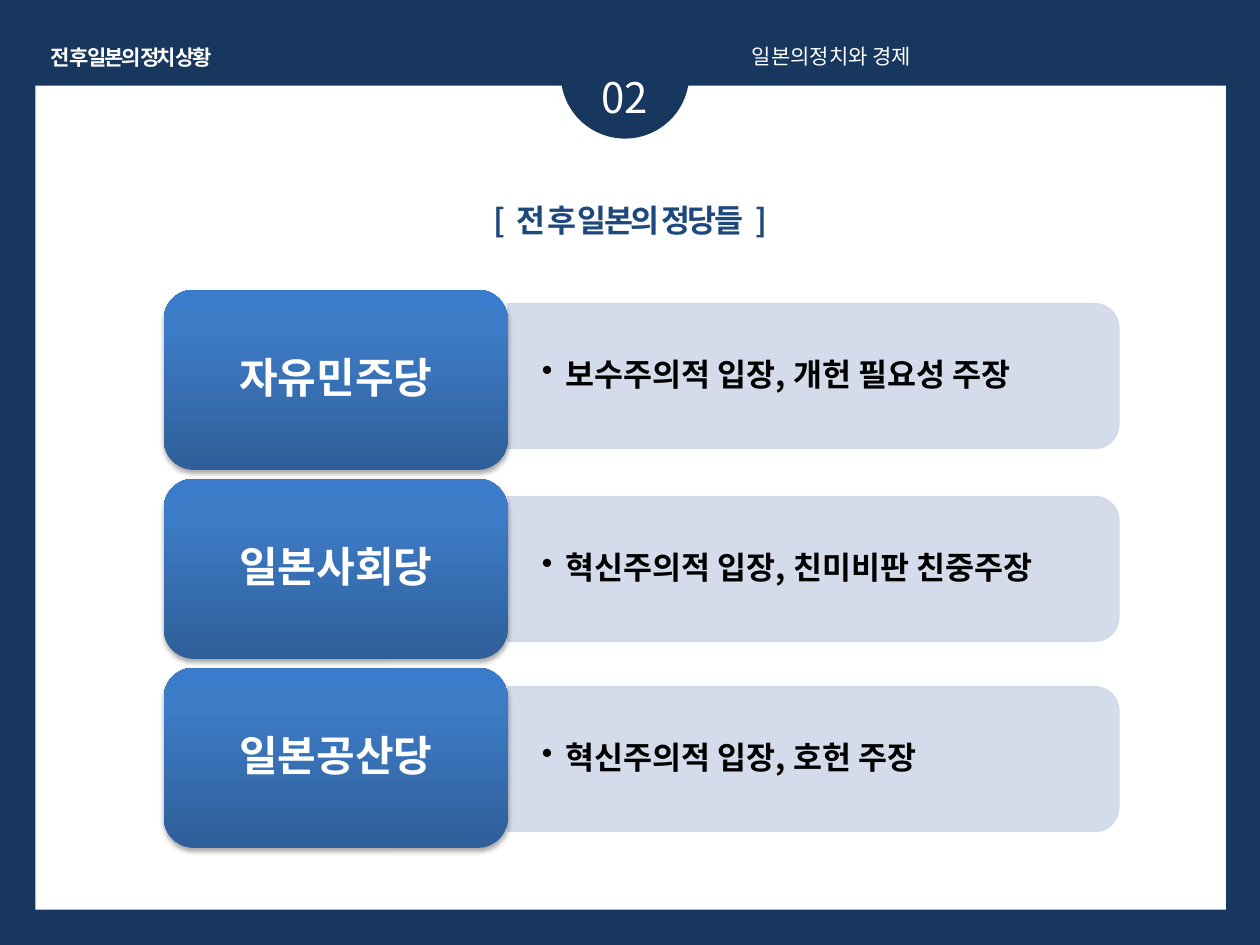
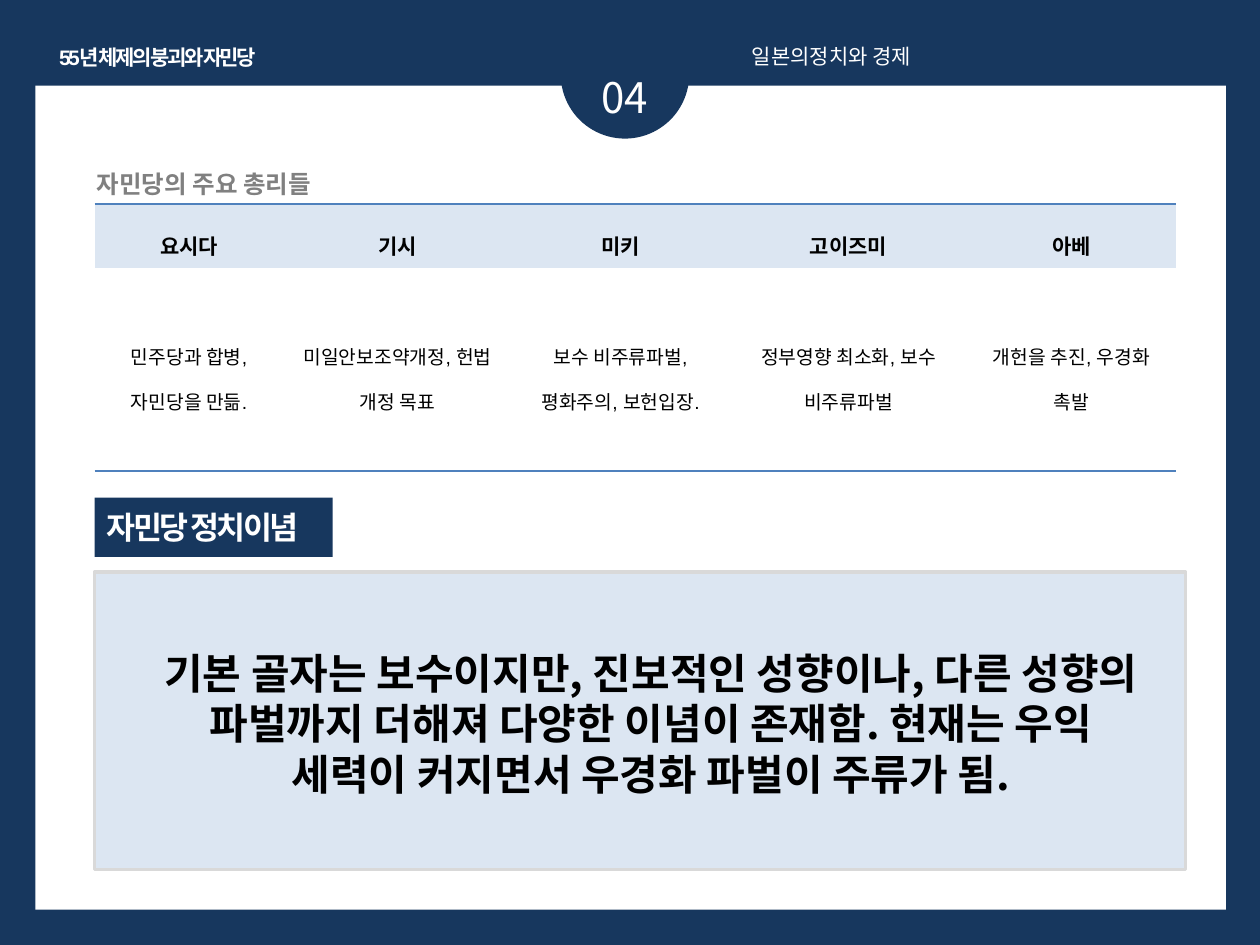
from lxml import etree
from pptx import Presentation
from pptx.dml.color import RGBColor
from pptx.enum import shapes, text
from pptx.oxml import parse_xml
from pptx.oxml.ns import nsdecls, qn
from pptx.util import Inches, Pt

NAVY, WHITE, BLACK = "17375E", "FFFFFF", "000000"
TITLE_BLUE, PALE_BLUE, BAR_BLUE = "1F497D", "DCE6F2", "D0D8E8"
RULE_BLUE, GREY, LIGHT_GREY = "4F81BD", "808080", "D9D9D9"
CARD_GRADIENT = ((0, "2F5F99"), (80, "3D7CC7"), (100, "3A7CCB"))
KOREAN, LATIN = "Noto Sans CJK KR", "Arial"
PLAIN_TABLE_STYLE = "{2D5ABB26-0587-4C30-8999-92F81FD0307C}"
LEFT, CENTER, JUSTIFY = (text.PP_ALIGN.LEFT, text.PP_ALIGN.CENTER,
                         text.PP_ALIGN.JUSTIFY)
MIDDLE = text.MSO_ANCHOR.MIDDLE
SHAPE = shapes.MSO_SHAPE

SECTION = "일본의정치와 경제"
PARTIES = [  # name, position, top of its bar
    ("자유민주당", "보수주의적 입장, 개헌 필요성 주장", 2.41),
    ("일본사회당", "혁신주의적 입장, 친미비판 친중주장", 3.94),
    ("일본공산당", "혁신주의적 입장, 호헌 주장", 5.45),
]
CARD_TOP, CARD_STEP = 2.3, 1.5
PREMIERS = [  # name, policy, column width
    ("요시다", "민주당과 합병,자민당을 만듦.", 1.5),
    ("기시", "미일안보조약개정, 헌법 개정 목표", 1.81),
    ("미키", "보수 비주류파벌, 평화주의, 보헌입장.", 1.73),
    ("고이즈미", "정부영향 최소화, 보수 비주류파벌", 1.89),
    ("아베", "개헌을 추진, 우경화 촉발", 1.65),
]
IDEOLOGY = ("기본 골자는 보수이지만, 진보적인 성향이나, 다른 성향의 파벌까지 "
            "더해져 다양한 이념이 존재함. 현재는 우익 세력이 커지면서 "
            "우경화 파벌이 주류가 됨.")


def color(value):
    return RGBColor.from_string(value)


def box(left, top, width, height):
    return [Inches(length) for length in (left, top, width, height)]


def write(frame, content, size, fill, bold=False, align=LEFT, font=KOREAN,
          spacing=0, line_spacing=None):
    """Fill a text frame; content is a string or (string, spacing) pieces."""
    pieces = [(content, spacing)] if isinstance(content, str) else content
    paragraph = frame.paragraphs[0]
    paragraph.alignment = align
    if line_spacing:
        paragraph.line_spacing = line_spacing
    for piece, piece_spacing in pieces:
        run = paragraph.add_run()
        run.text = piece
        run.font.size = Pt(size)
        run.font.bold = bold
        run.font.name = font
        run.font.color.rgb = color(fill)
        properties = run.font._element
        etree.SubElement(properties, qn("a:ea")).set("typeface", KOREAN)
        if piece_spacing:
            properties.set("spc", str(round(piece_spacing * 100)))
    return paragraph


def add_text(slide, place, content, size, fill, **style):
    text_box = slide.shapes.add_textbox(*box(*place))
    text_box.text_frame.word_wrap = True
    paragraph = write(text_box.text_frame, content, size, fill, **style)
    return text_box.text_frame, paragraph


def add_block(slide, kind, place, fill, line=None, line_width=0.75):
    block = slide.shapes.add_shape(kind, *box(*place))
    block.shadow.inherit = False
    block.fill.solid()
    block.fill.fore_color.rgb = color(fill)
    if line:
        block.line.color.rgb = color(line)
        block.line.width = Pt(line_width)
    else:
        block.line.fill.background()
    return block


def add_framed_slide(presentation, title, title_place, number):
    """Add a slide with the navy frame, header texts and number tab."""
    slide = presentation.slides.add_slide(presentation.slide_layouts[5])
    slide.background.fill.solid()
    slide.background.fill.fore_color.rgb = color(NAVY)

    heading = slide.shapes.title
    heading.left, heading.top, heading.width, heading.height = box(*title_place)
    frame = heading.text_frame
    frame.word_wrap = False
    frame.auto_size = text.MSO_AUTO_SIZE.NONE
    frame.vertical_anchor = text.MSO_ANCHOR.TOP
    write(frame, title, 12, WHITE, bold=True, align=CENTER, font=LATIN,
          spacing=-1.5)

    add_block(slide, SHAPE.RECTANGLE, (0.28, 0.68, 9.45, 6.54), WHITE)
    add_block(slide, SHAPE.OVAL, (4.45, 0.08, 1.02, 1.02), NAVY)
    add_text(slide, (4.37, 0.52, 1.18, 0.5), number, 24, WHITE, align=CENTER)
    add_text(slide, (5.87, 0.3, 3.94, 0.3), SECTION, 12, WHITE, align=JUSTIFY)
    return slide


def set_card_finish(card):
    """Give a card its vertical gradient and soft shadow."""
    stops = "".join(
        f'<a:gs pos="{position * 1000}"><a:srgbClr val="{value}"/></a:gs>'
        for position, value in CARD_GRADIENT)
    gradient = parse_xml(
        f'<a:gradFill {nsdecls("a")} rotWithShape="1"><a:gsLst>{stops}</a:gsLst>'
        '<a:lin ang="16200000" scaled="0"/></a:gradFill>')
    properties = card._element.spPr
    properties.replace(properties.find(qn("a:solidFill")), gradient)
    properties.find(qn("a:effectLst")).append(parse_xml(
        f'<a:outerShdw {nsdecls("a")} blurRad="40000" dist="23000" '
        'dir="5400000" rotWithShape="0"><a:srgbClr val="000000">'
        '<a:alpha val="35000"/></a:srgbClr></a:outerShdw>'))


def add_bar(slide, left, top, width, height):
    """Add a translucent bar whose right corners are rounded."""
    turned_place = (left + (width - height) / 2, top + (height - width) / 2,
                    height, width)
    bar = add_block(slide, SHAPE.ROUND_2_SAME_RECTANGLE, turned_place,
                    BAR_BLUE, line=BAR_BLUE)
    bar.rotation = 90
    for tint in bar._element.spPr.iter(qn("a:srgbClr")):
        etree.SubElement(tint, qn("a:alpha")).set("val", "90000")


def add_bullet(paragraph, indent):
    properties = paragraph._p.get_or_add_pPr()
    properties.set("marL", str(Inches(indent)))
    properties.set("indent", str(-Inches(indent)))
    etree.SubElement(properties, qn("a:buChar")).set("char", "•")


def add_party_row(slide, card_top, name, position, bar_top):
    add_bar(slide, 4.03, bar_top, 4.85, 1.15)
    frame, paragraph = add_text(slide, (4.03, bar_top + 0.06, 4.8, 1.03),
                                position, 18, BLACK, bold=True,
                                line_spacing=0.9)
    frame.vertical_anchor = MIDDLE
    frame.margin_left = frame.margin_right = Inches(0.27)
    frame.margin_top = frame.margin_bottom = Inches(0.14)
    add_bullet(paragraph, 0.19)

    card = add_block(slide, SHAPE.ROUNDED_RECTANGLE,
                     (1.3, card_top, 2.73, 1.43), NAVY)
    set_card_finish(card)
    card.text_frame.vertical_anchor = MIDDLE
    write(card.text_frame, name, 24, WHITE, bold=True, align=CENTER,
          line_spacing=0.9)


def add_rule(cell, edge):
    """Draw a thin rule on one edge (lnT or lnB) of a cell."""
    cell._tc.get_or_add_tcPr().insert(0, parse_xml(
        f'<a:{edge} {nsdecls("a")} w="12700"><a:solidFill>'
        f'<a:srgbClr val="{RULE_BLUE}"/></a:solidFill></a:{edge}>'))


def fill_cell(cell, content, size, bold):
    cell.vertical_anchor = MIDDLE
    cell.margin_left = cell.margin_right = Inches(0.07)
    cell.margin_top = cell.margin_bottom = Inches(0.02)
    write(cell.text_frame, content, size, BLACK, bold=bold, align=CENTER,
          font=LATIN, line_spacing=1.6)


def add_premier_table(slide):
    table = slide.shapes.add_table(2, len(PREMIERS),
                                   *box(0.75, 1.62, 8.58, 2.13)).table
    table._tbl.tblPr.find(qn("a:tableStyleId")).text = PLAIN_TABLE_STYLE
    table.first_row = table.horz_banding = False
    table.rows[0].height, table.rows[1].height = Inches(0.51), Inches(1.61)
    for column, (name, policy, width) in enumerate(PREMIERS):
        table.columns[column].width = Inches(width)
        header, body = table.cell(0, column), table.cell(1, column)
        fill_cell(header, name, 12, True)
        header.fill.solid()
        header.fill.fore_color.rgb = color(PALE_BLUE)
        add_rule(header, "lnT")
        fill_cell(body, policy, 11, False)
        body.fill.background()
        add_rule(body, "lnB")


def add_parties_slide(presentation):
    slide = add_framed_slide(presentation, "전 후 일본의 정치 상황",
                             (0.2, 0.3, 1.68, 0.3), "02")
    heading = [("[ ", 1), ("전 후 일본의 정당들", -1.5), (" ]", 3)]
    add_text(slide, (2.72, 1.55, 4.57, 0.4), heading, 18, TITLE_BLUE,
             bold=True, align=CENTER)
    for row, party in enumerate(PARTIES):
        add_party_row(slide, CARD_TOP + row * CARD_STEP, *party)


def add_premiers_slide(presentation):
    slide = add_framed_slide(presentation, "55년 체제의 붕괴와 자민당",
                             (0.28, 0.3, 1.94, 0.3), "04")
    add_text(slide, (0.67, 1.29, 3.35, 0.34), "자민당의 주요 총리들", 14, GREY,
             bold=True)
    add_premier_table(slide)
    label = add_block(slide, SHAPE.RECTANGLE, (0.75, 3.95, 1.89, 0.47), NAVY)
    label.text_frame.vertical_anchor = MIDDLE
    write(label.text_frame, "자민당 정치이념", 18, WHITE, bold=True, spacing=-1.5)
    add_block(slide, SHAPE.RECTANGLE, (0.75, 4.54, 8.66, 2.36), PALE_BLUE,
              line=LIGHT_GREY, line_width=2)
    add_text(slide, (1.11, 5.09, 8.11, 1.31), IDEOLOGY, 24, BLACK, bold=True,
             align=CENTER)


def main():
    presentation = Presentation()
    presentation.slide_width = Inches(10)
    presentation.slide_height = Inches(7.5)
    add_parties_slide(presentation)
    add_premiers_slide(presentation)
    presentation.save("out.pptx")


if __name__ == "__main__":
    main()
